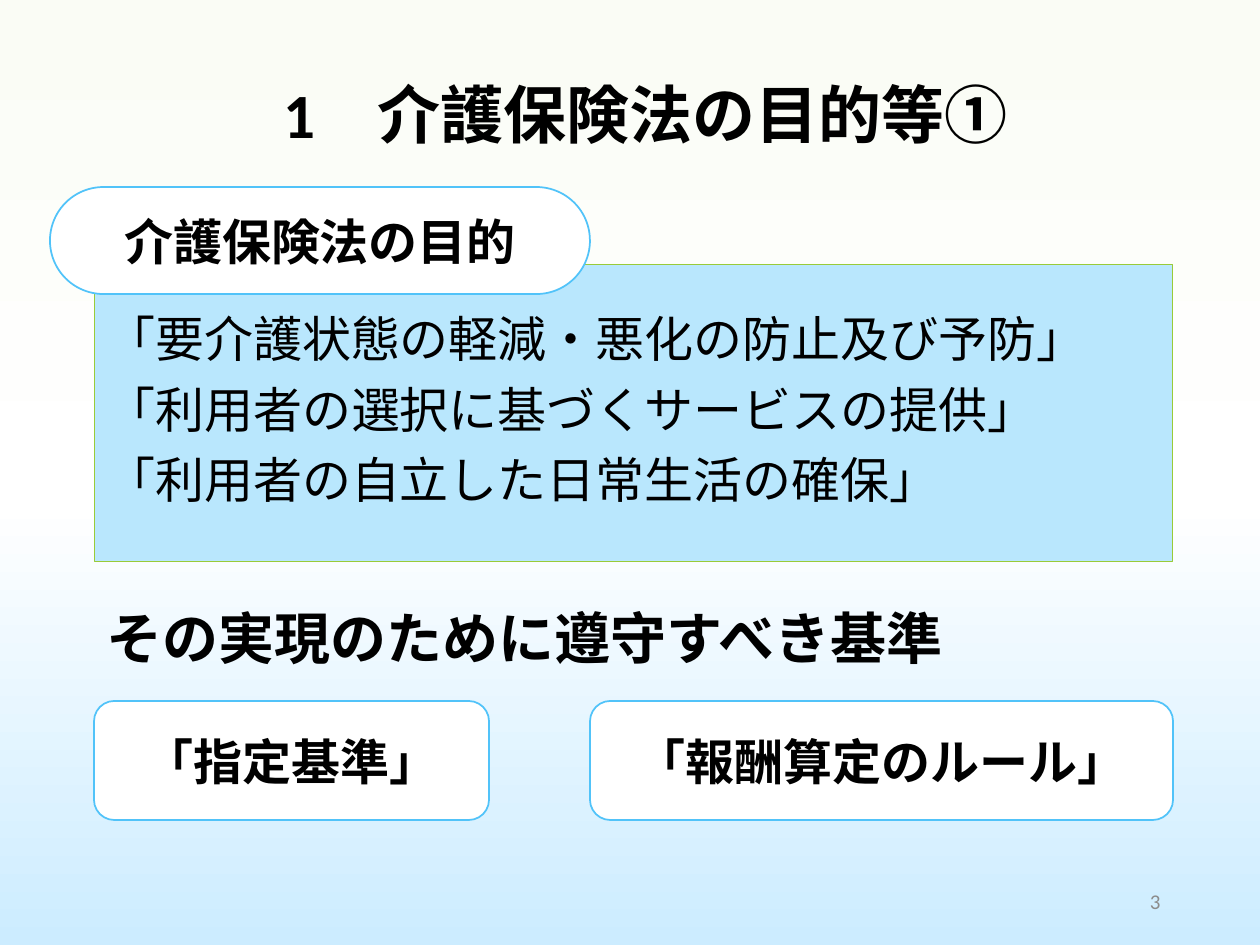
from copy import deepcopy
from dataclasses import dataclass

from pptx import Presentation
from pptx.dml.color import RGBColor
from pptx.enum.shapes import MSO_SHAPE
from pptx.enum.text import MSO_ANCHOR, MSO_AUTO_SIZE, PP_ALIGN
from pptx.util import Emu, Pt

PX_PER_INCH = 126


@dataclass(frozen=True)
class Theme:
    font: str = "Calibri"
    text: str = "000000"
    muted: str = "8C8C8C"
    white: str = "FFFFFF"
    panel: str = "B9E7FD"
    panel_line: str = "99CB38"
    box_line: str = "51C3F9"
    background: tuple = ((0, "FAFCF5"), (0.53, "FFFFFF"), (1, "CCECFF"))
    title_size: int = 36
    heading_size: int = 32
    body_size: int = 28
    number_size: int = 12


THEME = Theme()


def px(value):
    return Emu(round(value * 914400 / PX_PER_INCH))


def rgb(value):
    return RGBColor.from_string(value)


def set_background(slide):
    fill = slide.background.fill
    fill.gradient()
    fill.gradient_angle = 270  # top to bottom
    # The default gradient has two stops; add a middle one
    first_stop = slide.background._cSld.xpath(".//a:gs")[0]
    first_stop.addnext(deepcopy(first_stop))
    for stop, (position, color) in zip(fill.gradient_stops, THEME.background):
        stop.position = position
        stop.color.rgb = rgb(color)


def write_text(shape, lines, size, bold=False, color=THEME.text,
               align=PP_ALIGN.LEFT, line_spacing=1.0, space_before=0):
    frame = shape.text_frame
    frame.text = "\n".join(lines)
    frame.word_wrap = True
    frame.auto_size = MSO_AUTO_SIZE.NONE
    frame.vertical_anchor = MSO_ANCHOR.MIDDLE
    for paragraph in frame.paragraphs:
        paragraph.alignment = align
        paragraph.line_spacing = line_spacing
        paragraph.space_before = Pt(space_before)
        paragraph.font.name = THEME.font
        paragraph.font.size = Pt(size)
        paragraph.font.bold = bold
        paragraph.font.color.rgb = rgb(color)


def add_title(slide, text, left, top, width, height):
    title = slide.shapes.title
    title.left, title.top = px(left), px(top)
    title.width, title.height = px(width), px(height)
    write_text(title, [text], THEME.title_size, bold=True,
               align=PP_ALIGN.CENTER, line_spacing=0.9)


def add_label(slide, text, left, top, width, height, size, **style):
    label = slide.shapes.add_textbox(px(left), px(top), px(width), px(height))
    write_text(label, [text], size, **style)


def add_box(slide, kind, left, top, width, height, fill, line, line_width):
    box = slide.shapes.add_shape(kind, px(left), px(top), px(width), px(height))
    box.shadow.inherit = False
    box.fill.solid()
    box.fill.fore_color.rgb = rgb(fill)
    box.line.color.rgb = rgb(line)
    box.line.width = Pt(line_width)
    return box


def add_panel(slide, lines, left, top, width, height):
    panel = add_box(slide, MSO_SHAPE.RECTANGLE, left, top, width, height,
                    THEME.panel, THEME.panel_line, 0.5)
    write_text(panel, lines, THEME.body_size, line_spacing=0.9, space_before=10)


def add_rounded_box(slide, text, left, top, width, height, roundness=0.17):
    box = add_box(slide, MSO_SHAPE.ROUNDED_RECTANGLE, left, top, width, height,
                  THEME.white, THEME.box_line, 1)
    box.adjustments[0] = roundness
    write_text(box, [text], THEME.body_size, bold=True, align=PP_ALIGN.CENTER)


def main():
    presentation = Presentation()
    presentation.slide_width, presentation.slide_height = px(1260), px(945)
    slide = presentation.slides.add_slide(presentation.slide_layouts[5])
    set_background(slide)

    add_title(slide, "1　介護保険法の目的等①", 94, 41, 1103, 154)

    # Purpose of the law, with its tab over the panel corner
    add_panel(slide, [
        "「要介護状態の軽減・悪化の防止及び予防」",
        "「利用者の選択に基づくサービスの提供」",
        "「利用者の自立した日常生活の確保」",
    ], 94, 264, 1079, 297)
    add_rounded_box(slide, "介護保険法の目的", 50, 187, 540, 107, roundness=0.5)

    # Standards to be observed
    add_label(slide, "その実現のために遵守すべき基準", 94, 583, 1079, 117,
              THEME.heading_size, bold=True, line_spacing=0.9)
    add_rounded_box(slide, "「指定基準」", 94, 701, 395, 119)
    add_rounded_box(slide, "「報酬算定のルール」", 590, 701, 583, 119)

    # Slide number
    add_label(slide, "3", 890, 876, 283, 50, THEME.number_size,
              color=THEME.muted, align=PP_ALIGN.RIGHT)

    presentation.save("out.pptx")


if __name__ == "__main__":
    main()
